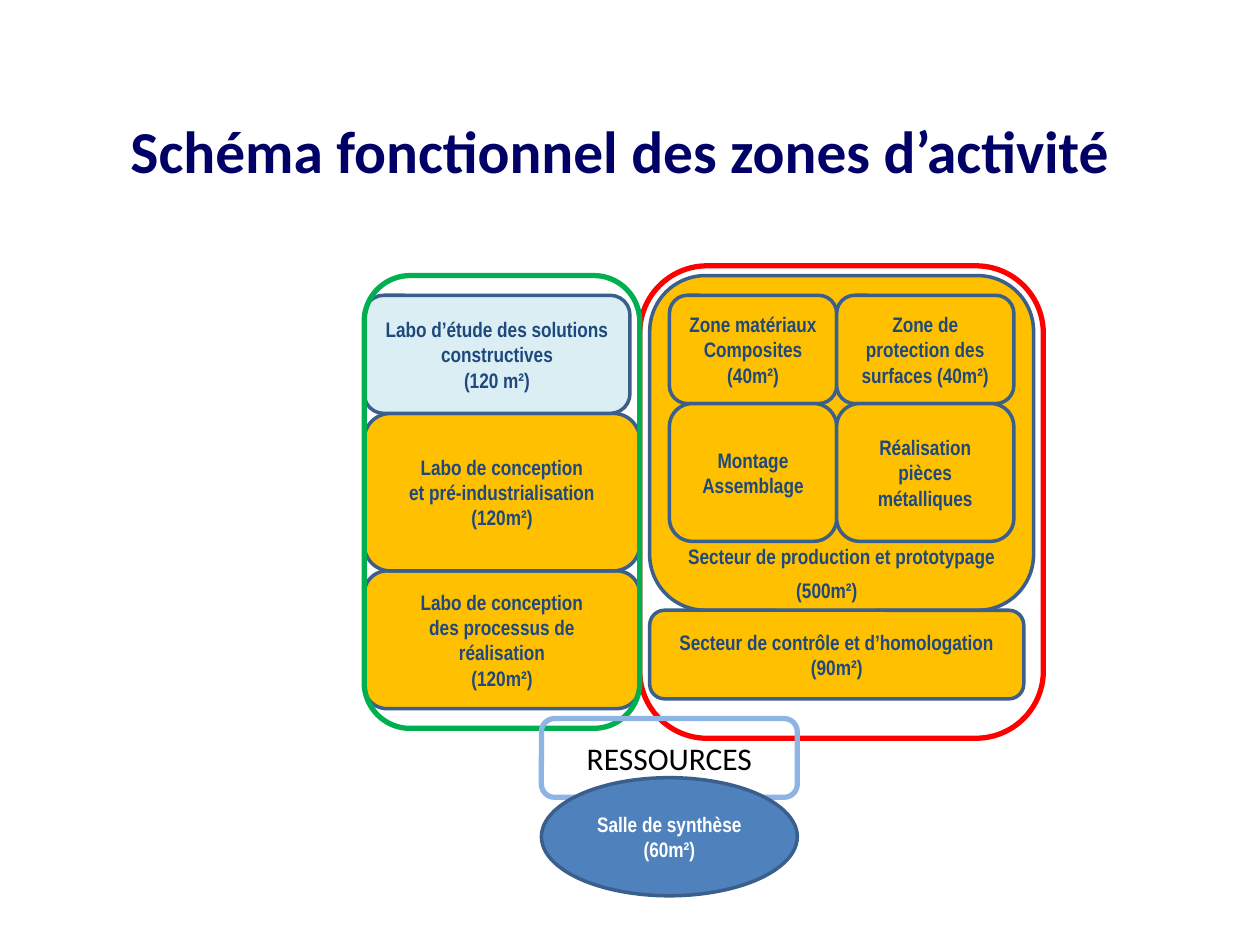
from pptx import Presentation
from pptx import util as u
from pptx.dml import color
from pptx.enum import shapes, text

COLOURS = {
    "amber": "FFC000", "ice": "DBEEF4", "blue": "4F81BD", "outline": "3A5F8C",
    "red": "FF0000", "green": "00B050", "sky": "8EB4E3", "label": "1F497D",
    "title": "000066", "black": "000000", "white": "FFFFFF",
}
EMU_PER_PX = 9144000 / 1280
ROUNDED = shapes.MSO_SHAPE.ROUNDED_RECTANGLE
OVAL = shapes.MSO_SHAPE.OVAL
RECTANGLE = shapes.MSO_SHAPE.RECTANGLE


def px(length):
    return u.Emu(round(length * EMU_PER_PX))


def rgb(name):
    return color.RGBColor.from_string(COLOURS[name])


class ZonePlan:
    label_font = "Arial Narrow"
    body_font = "Calibri"

    def __init__(self, slide):
        self.slide = slide

    def add_lines(self, frame, lines, font, size, ink, bold=True,
                  align=text.PP_ALIGN.CENTER):
        frame.word_wrap = True
        for number, line in enumerate(lines):
            paragraph = frame.add_paragraph() if number else frame.paragraphs[0]
            paragraph.alignment = align
            run = paragraph.add_run()
            run.text = line
            run.font.name = font
            run.font.size = u.Pt(size)
            run.font.bold = bold
            run.font.color.rgb = rgb(ink)

    def outline(self, box, kind=ROUNDED, fill=None, line="outline", weight=2):
        shape = self.slide.shapes.add_shape(kind, *map(px, box))
        shape.shadow.inherit = False
        if fill:
            shape.fill.solid()
            shape.fill.fore_color.rgb = rgb(fill)
        else:
            shape.fill.background()
        if line:
            shape.line.color.rgb = rgb(line)
            shape.line.width = u.Pt(weight)
        else:
            shape.line.fill.background()
        return shape

    def zone(self, box, lines, fill="amber", kind=ROUNDED, line="outline",
             ink="label", side=13, bottom=6, anchor=text.MSO_ANCHOR.MIDDLE):
        frame = self.outline(box, kind, fill, line).text_frame
        frame.margin_left = frame.margin_right = px(side)
        frame.margin_bottom = px(bottom)
        frame.vertical_anchor = anchor
        self.add_lines(frame, lines, self.label_font, 12, ink)

    def caption(self, box, words, line):
        frame = self.outline(box, line=line, weight=3).text_frame
        frame.vertical_anchor = text.MSO_ANCHOR.MIDDLE
        self.add_lines(frame, [words], self.body_font, 18, "black", bold=False)

    def title(self, box, words):
        frame = self.slide.shapes.add_textbox(*map(px, box)).text_frame
        self.add_lines(frame, [words], self.body_font, 34, "title",
                       align=text.PP_ALIGN.LEFT)


def main():
    deck = Presentation()
    deck.slide_width, deck.slide_height = px(1280), px(960)
    plan = ZonePlan(deck.slides.add_slide(deck.slide_layouts[6]))

    lab_left, lab_width = 370, 280
    sector_left = 660
    workshop_columns = [(680, 170), (850, 180)]
    workshop_rows = [(300, 110), (410, 140)]
    workshops = [
        [["Zone matériaux", "Composites", "(40m²)"],
         ["Zone de protection des surfaces (40m²)"]],
        [["Montage", "Assemblage"],
         ["Réalisation pièces métalliques"]],
    ]

    plan.zone((sector_left, 280, 390, 340),
              ["Secteur de production et prototypage"],
              bottom=26, anchor=text.MSO_ANCHOR.BOTTOM)
    plan.zone((lab_left, 580, lab_width, 140),
              ["Labo de conception", "des processus de réalisation", "(120m²)"],
              side=24)
    plan.zone((sector_left, 620, 380, 90),
              ["Secteur de contrôle et d’homologation", "(90m²)"])
    plan.zone((lab_left, 420, lab_width, 160),
              ["Labo de conception", "et pré-industrialisation", "(120m²)"])
    plan.zone((lab_left, 300, 270, 120),
              ["Labo d’étude des solutions", "constructives", "(120 m²)"],
              fill="ice")

    for (top, height), row in zip(workshop_rows, workshops):
        for (left, width), lines in zip(workshop_columns, row):
            plan.zone((left, top, width, height), lines)

    plan.outline((650, 270, 410, 480), line="red", weight=3)
    plan.outline((lab_left, 280, lab_width, 460), line="green", weight=3)
    plan.caption((550, 730, 260, 80), "RESSOURCES", "sky")
    plan.title((120, 110, 1050, 86), "Schéma fonctionnel des zones d’activité")
    plan.zone((790, 580, 100, 38), ["(500m²)"], kind=RECTANGLE, line=None)
    plan.zone((550, 790, 260, 120), ["Salle de synthèse (60m²)"],
              fill="blue", kind=OVAL, ink="white")

    deck.save("out.pptx")


if __name__ == "__main__":
    main()
